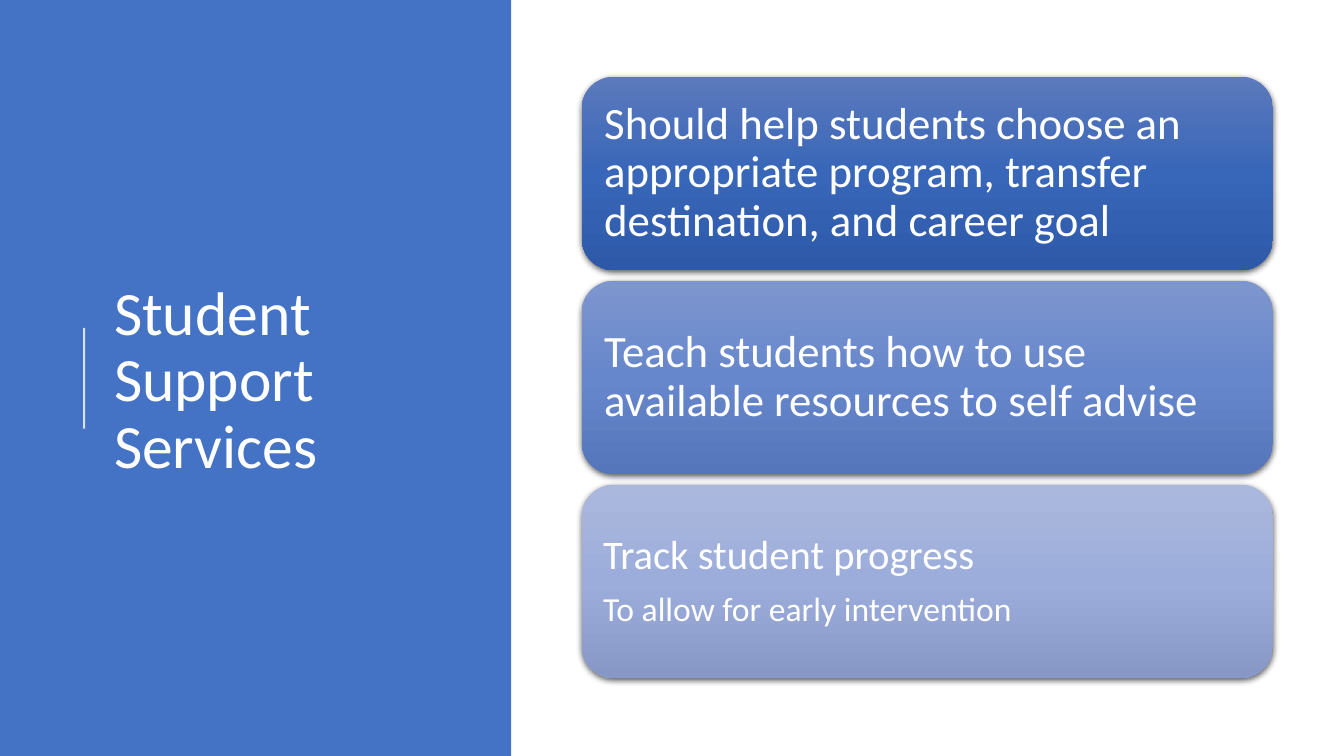
from dataclasses import dataclass

from lxml.etree import SubElement
from pptx import Presentation
from pptx.dml.color import RGBColor
from pptx.enum.shapes import MSO_CONNECTOR, MSO_SHAPE
from pptx.enum.text import MSO_ANCHOR, PP_ALIGN
from pptx.oxml.ns import qn
from pptx.util import Cm, Pt


@dataclass(frozen=True)
class Theme:
    font: str = "Calibri"
    panel: str = "4472C4"
    white: str = "FFFFFF"
    shadow: str = "000000"
    title_size: int = 44
    large_size: int = 32
    medium_size: int = 29
    small_size: int = 24


theme = Theme()


def write(para, text, size):
    span = para.add_run()
    span.text = text
    span.font.name = theme.font
    span.font.size = Pt(size)
    span.font.color.rgb = RGBColor.from_string(theme.white)
    para.alignment = PP_ALIGN.LEFT
    para.line_spacing = 0.9


def add_color(parent, color, alpha=100):
    node = SubElement(parent, qn("a:srgbClr"), val=color)
    if alpha < 100:
        SubElement(node, qn("a:alpha"), val=str(alpha * 1000))


deck = Presentation()
deck.slide_width, deck.slide_height = Cm(33.87), Cm(19.05)
page = deck.slides.add_slide(deck.slide_layouts[5])

# Left panel, placed behind the title
title = page.shapes.title
panel = page.shapes.add_shape(MSO_SHAPE.RECTANGLE, 0, 0, Cm(12.88), deck.slide_height)
panel.shadow.inherit = False
panel.fill.solid()
panel.fill.fore_color.rgb = RGBColor.from_string(theme.panel)
panel.line.fill.background()
title.element.addprevious(panel.element)

# Accent line beside the title
accent = page.shapes.add_connector(
    MSO_CONNECTOR.STRAIGHT, Cm(2.12), Cm(10.8), Cm(2.12), Cm(8.26))
accent.line.width = Pt(1.5)
accent.line.fill.solid()
line_fill = accent.line.fill.fore_color
line_fill.rgb = RGBColor.from_string(theme.white)
line_color = accent.element.spPr.find(".//" + qn("a:srgbClr"))
SubElement(line_color, qn("a:alpha"), val="80000")
SubElement(accent.element.spPr, qn("a:effectLst"))

# Title
title.left, title.top, title.width, title.height = Cm(2.62), Cm(1.98), Cm(9.37), Cm(15.29)
title.text_frame.word_wrap = True
title.text_frame.vertical_anchor = MSO_ANCHOR.MIDDLE
write(title.text_frame.paragraphs[0], "Student Support Services", theme.title_size)

# Three stacked cards: gradient colours from top to bottom, inset, paragraphs
cards = [
    (("5C7ABD", "3866B8", "2D59A8"), 0.33,
     [("Should help students choose an appropriate program, transfer destination, "
       "and career goal", theme.large_size)]),
    (("7E96CE", "6787CC", "5676BB"), 0.33,
     [("Teach students how to use available resources to self advise", theme.large_size)]),
    (("ABB8DD", "9CADDB", "8798C6"), 0.3,
     [("Track student progress", theme.medium_size),
      ("To allow for early intervention", theme.small_size)]),
]
card_top, card_pitch = 1.93, 5.14

for row, (colors, inset, lines) in enumerate(cards):
    card = page.shapes.add_shape(
        MSO_SHAPE.ROUNDED_RECTANGLE,
        Cm(14.66), Cm(card_top + row * card_pitch), Cm(17.42), Cm(4.88))
    card.line.fill.background()

    # Vertical three-stop gradient
    card.fill.gradient()
    card.fill.gradient_angle = 270
    stops = card.element.spPr.find(".//" + qn("a:gsLst"))
    stops.clear()
    for position, color in zip((0, 50000, 100000), colors):
        add_color(SubElement(stops, qn("a:gs"), pos=str(position)), color)

    # Soft shadow below the card
    card.shadow.inherit = False
    effects = card.element.spPr.find(qn("a:effectLst"))
    shadow = SubElement(effects, qn("a:outerShdw"), blurRad=str(Pt(4.5)),
                        dist=str(Pt(1.5)), dir="5400000", algn="ctr", rotWithShape="0")
    add_color(shadow, theme.shadow, 63)

    # Card text
    frame = card.text_frame
    frame.word_wrap = True
    frame.vertical_anchor = MSO_ANCHOR.MIDDLE
    frame.margin_left = frame.margin_right = Cm(inset)
    frame.margin_top = frame.margin_bottom = Cm(inset)
    for index, (text, size) in enumerate(lines):
        para = frame.add_paragraph() if index else frame.paragraphs[0]
        write(para, text, size)
        para.space_after = Pt(round(size * 0.35))

deck.save("out.pptx")
